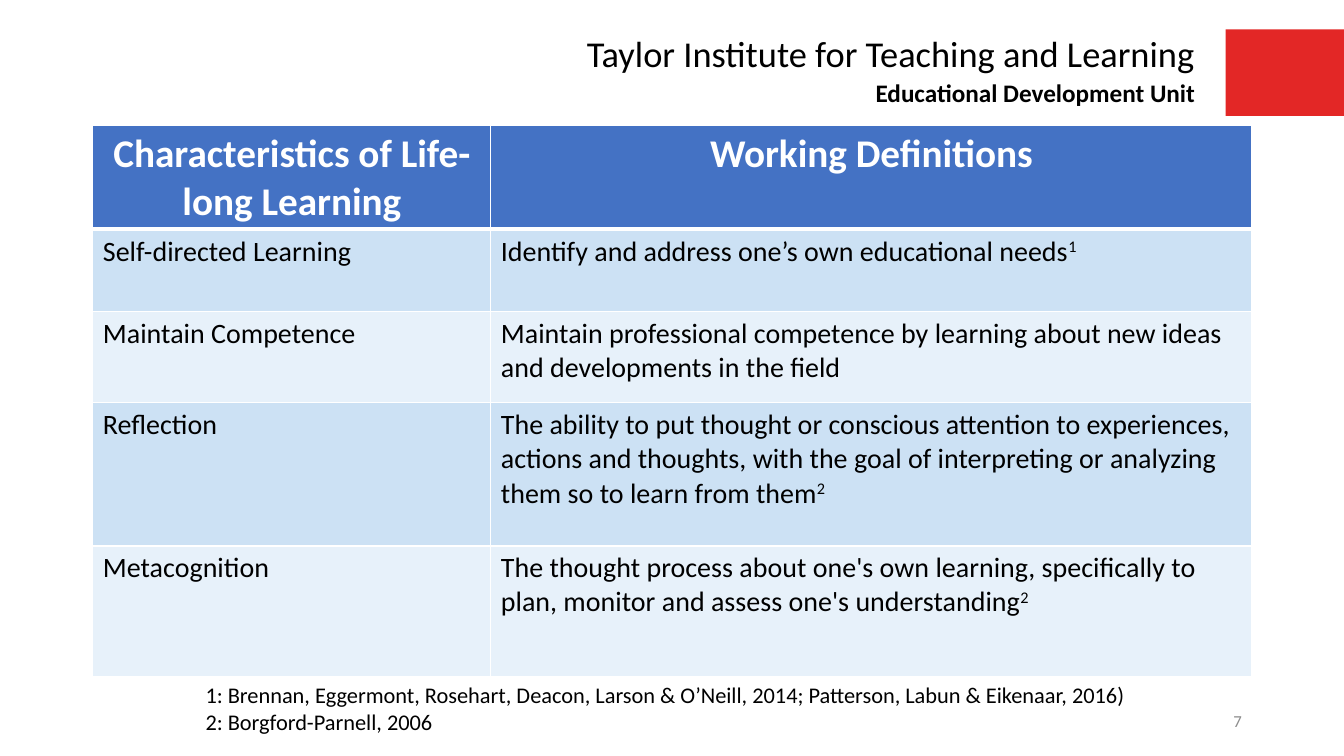
from lxml import etree
from pptx import Presentation
from pptx import util as u
from pptx.dml.color import RGBColor
from pptx.enum import shapes, text
from pptx.oxml.ns import qn

LEFT, CENTER, RIGHT = text.PP_ALIGN.LEFT, text.PP_ALIGN.CENTER, text.PP_ALIGN.RIGHT
BLACK, WHITE, GREY, RED = "000000", "FFFFFF", "8C8C8C", "E32726"
HEADER_FILL, BAND_FILLS = "4472C4", ("CCE1F4", "E7F1FA")

HEADINGS = ("Characteristics of Life-long Learning", "Working Definitions")
# Characteristic, definition, reference mark
CHARACTERISTICS = [
    ("Self-directed Learning",
     "Identify and address one’s own educational needs", "1"),
    ("Maintain Competence",
     "Maintain professional competence by learning about new ideas "
     "and developments in the field", ""),
    ("Reflection",
     "The ability to put thought or conscious attention to experiences, actions and "
     "thoughts, with the goal of interpreting or analyzing them so to learn from them", "2"),
    ("Metacognition",
     "The thought process about one's own learning, specifically to plan, "
     "monitor and assess one's understanding", "2"),
]
REFERENCES = [
    "1: Brennan, Eggermont, Rosehart, Deacon, Larson & O’Neill, 2014; "
    "Patterson, Labun & Eikenaar, 2016)",
    "2: Borgford-Parnell, 2006",
]


def rgb(value):
    return RGBColor.from_string(value)


class SlideBuilder:
    font = "Calibri"

    def __init__(self, slide):
        self.slide = slide

    def style(self, p, size, color, align=LEFT, bold=False):
        p.alignment = align
        p.font.name, p.font.size, p.font.bold = self.font, u.Pt(size), bold
        p.font.color.rgb = rgb(color)

    def block(self, x, y, w, h, fill):
        sp = self.slide.shapes.add_shape(
            shapes.MSO_SHAPE.RECTANGLE, u.Cm(x), u.Cm(y), u.Cm(w), u.Cm(h))
        sp.shadow.inherit = False
        sp.fill.solid()
        sp.fill.fore_color.rgb = rgb(fill)
        sp.line.fill.background()

    def label(self, x, y, w, h, lines, size, color=BLACK, align=LEFT, bold=False,
              wrap=True, anchor=text.MSO_ANCHOR.TOP):
        tf = self.slide.shapes.add_textbox(u.Cm(x), u.Cm(y), u.Cm(w), u.Cm(h)).text_frame
        tf.word_wrap, tf.vertical_anchor = wrap, anchor
        for i, line in enumerate(lines):
            p = tf.add_paragraph() if i else tf.paragraphs[0]
            p.add_run().text = line
            self.style(p, size, color, align, bold)

    def table(self, x, y, widths, heights):
        tb = self.slide.shapes.add_table(
            len(heights), len(widths), u.Cm(x), u.Cm(y),
            u.Cm(sum(widths)), u.Cm(sum(heights))).table
        for col, w in zip(tb.columns, widths):
            col.width = u.Cm(w)
        for row, h in zip(tb.rows, heights):
            row.height = u.Cm(h)
        return tb

    def cell(self, cell, content, fill, size, color, align=LEFT, bold=False,
             mark="", top=1, bottom=1):
        """Fill one table cell; mark is superscript, top and bottom are border points."""
        cell.fill.solid()
        cell.fill.fore_color.rgb = rgb(fill)
        p = cell.text_frame.paragraphs[0]
        p.add_run().text = content
        if mark:
            r = p.add_run()
            r.text = mark
            r.font._element.set("baseline", "30000")
        self.style(p, size, color, align, bold)
        self.borders(cell, {"lnL": 1, "lnR": 1, "lnT": top, "lnB": bottom})

    def borders(self, cell, points):
        tc_pr = cell._tc.get_or_add_tcPr()
        for i, (side, width) in enumerate(points.items()):
            ln = etree.Element(qn(f"a:{side}"), w=str(u.Pt(width)))
            fill = etree.SubElement(ln, qn("a:solidFill"))
            etree.SubElement(fill, qn("a:srgbClr"), val=WHITE)
            tc_pr.insert(i, ln)


def main():
    prs = Presentation()
    prs.slide_width, prs.slide_height = u.Cm(33.87), u.Cm(19.05)
    s = SlideBuilder(prs.slides.add_slide(prs.slide_layouts[6]))

    s.block(30.89, 0.74, 2.98, 2.18, RED)
    s.label(13, 0.66, 17.37, 1.37, ["Taylor Institute for Teaching and Learning"], 26,
            align=RIGHT)
    s.label(14.52, 1.83, 15.85, 1.02, ["Educational Development Unit"], 18,
            align=RIGHT, bold=True)

    tb = s.table(2.34, 3.15, (10.03, 19.18), (2.41, 2.08, 2.29, 3.61, 3.3))
    for c, heading in enumerate(HEADINGS):
        s.cell(tb.cell(0, c), heading, HEADER_FILL, 28, WHITE, CENTER, True, bottom=3)
    for i, (name, definition, mark) in enumerate(CHARACTERISTICS):
        fill, top = BAND_FILLS[i % 2], 1 if i else 3
        s.cell(tb.cell(i + 1, 0), name, fill, 20, BLACK, top=top)
        s.cell(tb.cell(i + 1, 1), definition, fill, 20, BLACK, mark=mark, top=top)

    s.label(23.93, 17.65, 7.62, 1.02, ["7"], 12, GREY, RIGHT,
            anchor=text.MSO_ANCHOR.MIDDLE)
    s.label(4.93, 17.04, 24, 1.63, REFERENCES, 16, wrap=False)
    prs.save("out.pptx")


if __name__ == "__main__":
    main()
